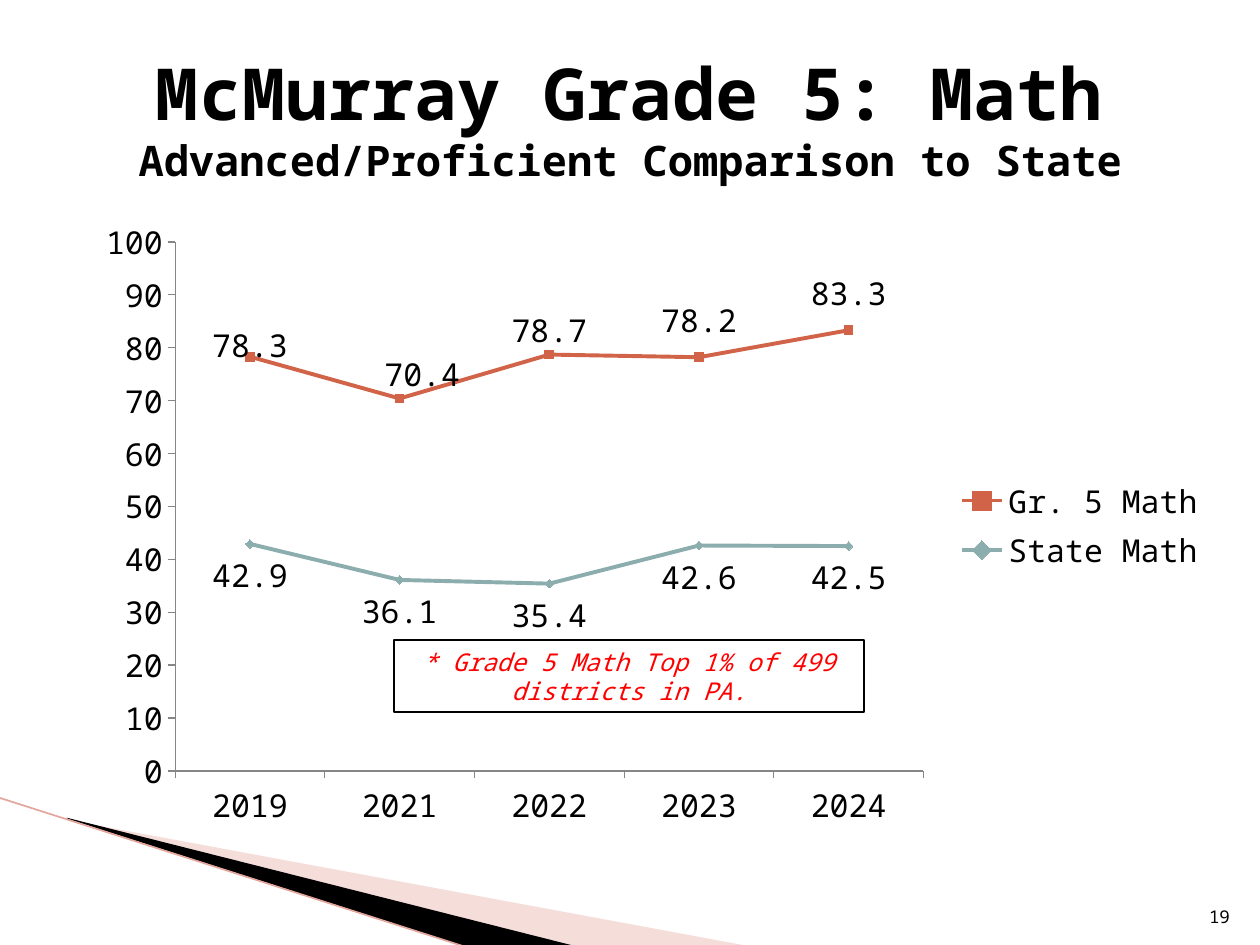
from lxml import etree
from pptx import Presentation
from pptx.chart.data import CategoryChartData
from pptx.dml.color import RGBColor
from pptx.enum.chart import (XL_CHART_TYPE, XL_LABEL_POSITION, XL_LEGEND_POSITION,
                             XL_MARKER_STYLE, XL_TICK_MARK)
from pptx.enum.shapes import MSO_CONNECTOR, MSO_SHAPE
from pptx.enum.text import MSO_ANCHOR, PP_ALIGN
from pptx.oxml import parse_xml
from pptx.oxml.ns import nsdecls, qn
from pptx.util import Inches, Pt

LINE_MARKERS = XL_CHART_TYPE.LINE_MARKERS
ABOVE, BELOW = XL_LABEL_POSITION.ABOVE, XL_LABEL_POSITION.BELOW
LEGEND_RIGHT = XL_LEGEND_POSITION.RIGHT
SQUARE, DIAMOND = XL_MARKER_STYLE.SQUARE, XL_MARKER_STYLE.DIAMOND
OUTSIDE = XL_TICK_MARK.OUTSIDE
STRAIGHT = MSO_CONNECTOR.STRAIGHT
RECTANGLE = MSO_SHAPE.RECTANGLE
MIDDLE, BOTTOM = MSO_ANCHOR.MIDDLE, MSO_ANCHOR.BOTTOM
CENTER, RIGHT = PP_ALIGN.CENTER, PP_ALIGN.RIGHT

FONT = "Noto Sans Mono"
BLACK = RGBColor(0x00, 0x00, 0x00)
RED = RGBColor(0xFF, 0x00, 0x00)
GRAY = RGBColor(0x86, 0x86, 0x86)
RUST = RGBColor(0xD1, 0x63, 0x49)
TEAL = RGBColor(0x8C, 0xAD, 0xAE)
PINK = RGBColor(0xE7, 0xAC, 0xA4)
ROSE = RGBColor(0xE3, 0xA5, 0x9C)

COLUMNS, ROWS = 100, 75
SLIDE_WIDTH, SLIDE_HEIGHT = Inches(10), Inches(7.5)
COLUMN, ROW = SLIDE_WIDTH / COLUMNS, SLIDE_HEIGHT / ROWS

YEARS = ["2019", "2021", "2022", "2023", "2024"]
SERIES = [
    ("Gr. 5 Math", [78.3, 70.4, 78.7, 78.2, 83.3], RUST, SQUARE, ABOVE),
    ("State Math", [42.9, 36.1, 35.4, 42.6, 42.5], TEAL, DIAMOND, BELOW),
]
GRADE_LABEL_SHIFTS = [(0, 0.03), (0.02, 0.01), (0, 0.01), (0, -0.01), (0, -0.01)]
PLOT_AREA = {"x": 0.08, "y": 0.05, "w": 0.66, "h": 0.84}


def grid(box):
    """Turn left, top, width, height in grid units into slide lengths."""
    left, top, width, height = box
    return round(left * COLUMN), round(top * ROW), round(width * COLUMN), round(height * ROW)


def format_run(run, size, color=BLACK, bold=False, italic=False):
    """Apply the slide's typeface and the given look to a run."""
    run.font.name, run.font.size = FONT, Pt(size)
    run.font.color.rgb = color
    run.font.bold, run.font.italic = bold, italic


def add_wedge(slide, points, color):
    """Draw one closed, unlined wedge through grid points."""
    corners = [grid(point + (0, 0))[:2] for point in points]
    builder = slide.shapes.build_freeform(*corners[0])
    builder.add_line_segments(corners[1:], close=True)
    wedge = builder.convert_to_shape()
    wedge.shadow.inherit = False
    wedge.fill.solid()
    wedge.fill.fore_color.rgb = color
    wedge.line.fill.background()
    return wedge


def add_corner_sweep(slide, box):
    """Draw the pale and black wedges and their edge line across the box."""
    left, top, width, height = box
    right, bottom = left + width, top + height
    pale = add_wedge(slide, [(5.5, top + 1.8), (right, bottom), (45.6, bottom),
                             (5.5, top + 1.7)], PINK)
    color = pale.fill._xPr.find(".//" + qn("a:srgbClr"))
    etree.SubElement(color, qn("a:alpha"), val="40000")
    add_wedge(slide, [(5.3, top + 1.6), (45.7, bottom), (37.2, bottom + 0.1),
                      (5.4, top + 1.7)], BLACK)
    start, end = grid((left, top, 0, 0))[:2], grid((37.1, bottom + 0.1, 0, 0))[:2]
    edge = slide.shapes.add_connector(STRAIGHT, *start, *end)
    edge.line.color.rgb = ROSE
    edge.line.width = Pt(0.95)
    etree.SubElement(edge._element.spPr, qn("a:effectLst"))


def add_title(slide, box):
    """Place the two-line heading."""
    text_frame = slide.shapes.add_textbox(*grid(box)).text_frame
    text_frame.word_wrap = True
    text_frame.vertical_anchor = MIDDLE
    paragraph = text_frame.paragraphs[0]
    paragraph.text = "McMurray Grade 5: Math\vAdvanced/Proficient Comparison to State"
    paragraph.alignment = CENTER
    for run, size in zip(paragraph.runs, (41, 24)):
        format_run(run, size, bold=True)


def manual_layout(inner=False, **shares):
    """Build a chart layout element from shares of the chart's size."""
    modes = '<c:layoutTarget val="inner"/><c:xMode val="edge"/><c:yMode val="edge"/>'
    places = "".join(f'<c:{name} val="{share}"/>' for name, share in shares.items())
    return parse_xml(f'<c:layout {nsdecls("c")}><c:manualLayout>{modes if inner else ""}'
                     f'{places}</c:manualLayout></c:layout>')


def style_axis(axis):
    """Give an axis a gray line, outside ticks and no gridlines."""
    axis.has_major_gridlines = False
    axis.major_tick_mark = OUTSIDE
    axis.format.line.color.rgb = GRAY
    axis.format.line.width = Pt(0.75)


def style_series(series, color, marker, position):
    """Colour one line with its markers and show its values."""
    series.smooth = False
    series.format.line.color.rgb = color
    series.format.line.width = Pt(2.25)
    series.marker.style, series.marker.size = marker, 5
    series.marker.format.fill.solid()
    series.marker.format.fill.fore_color.rgb = color
    series.marker.format.line.color.rgb = color
    series.data_labels.show_value = True
    series.data_labels.position = position


def add_score_chart(slide, box):
    """Place the line chart of grade scores against the state's."""
    data = CategoryChartData()
    data.categories = YEARS
    for name, values, *_ in SERIES:
        data.add_series(name, values)
    chart = slide.shapes.add_chart(LINE_MARKERS, *grid(box), data).chart
    chart.has_title = False
    chart.font.name, chart.font.size = FONT, Pt(18)
    chart.font.color.rgb = BLACK
    chart.has_legend = True
    chart.legend.position = LEGEND_RIGHT
    chart.legend.include_in_layout = False
    style_axis(chart.category_axis)
    style_axis(chart.value_axis)
    chart.value_axis.minimum_scale, chart.value_axis.maximum_scale = 0, 100
    chart.value_axis.major_unit = 10
    plot = chart.plots[0]
    plot.vary_by_categories = False
    for series, (_, _, color, marker, position) in zip(plot.series, SERIES):
        style_series(series, color, marker, position)
    grade = plot.series[0]
    for index, (across, down) in enumerate(GRADE_LABEL_SHIFTS):
        grade.points[index].data_label.position = ABOVE
        label = grade.data_labels._element.findall(qn("c:dLbl"))[index]
        label.insert(1, manual_layout(x=across, y=down))
    plot_area = chart._chartSpace.find(".//" + qn("c:plotArea"))
    for layout in plot_area.findall(qn("c:layout")):
        plot_area.remove(layout)
    plot_area.insert(0, manual_layout(inner=True, **PLOT_AREA))


def add_page_number(slide, box):
    """Place the page number in the lower right corner."""
    text_frame = slide.shapes.add_textbox(*grid(box)).text_frame
    text_frame.word_wrap = True
    text_frame.vertical_anchor = BOTTOM
    paragraph = text_frame.paragraphs[0]
    paragraph.text = "19"
    paragraph.alignment = RIGHT
    format_run(paragraph.runs[0], 10)


def add_ranking_note(slide, box):
    """Place the outlined note on the district ranking."""
    note = slide.shapes.add_shape(RECTANGLE, *grid(box))
    note.shadow.inherit = False
    note.fill.background()
    note.line.color.rgb = BLACK
    note.line.width = Pt(1)
    note.text_frame.word_wrap = True
    paragraph = note.text_frame.paragraphs[0]
    paragraph.text = "* Grade 5 Math Top 1% of 499 districts in PA."
    paragraph.alignment = CENTER
    format_run(paragraph.runs[0], 14, RED, italic=True)


def main():
    """Build and save the slide."""
    presentation = Presentation()
    presentation.slide_width, presentation.slide_height = SLIDE_WIDTH, SLIDE_HEIGHT
    slide = presentation.slides.add_slide(presentation.slide_layouts[6])
    add_corner_sweep(slide, (-0.1, 63.3, 59.6, 11.8))
    add_title(slide, (5, 3, 90, 12.5))
    add_score_chart(slide, (6.7, 16.7, 90, 50))
    add_page_number(slide, (94.6, 70.1, 4, 4))
    add_ranking_note(slide, (31.3, 50.8, 37.3, 5.7))
    presentation.save("out.pptx")


if __name__ == "__main__":
    main()
